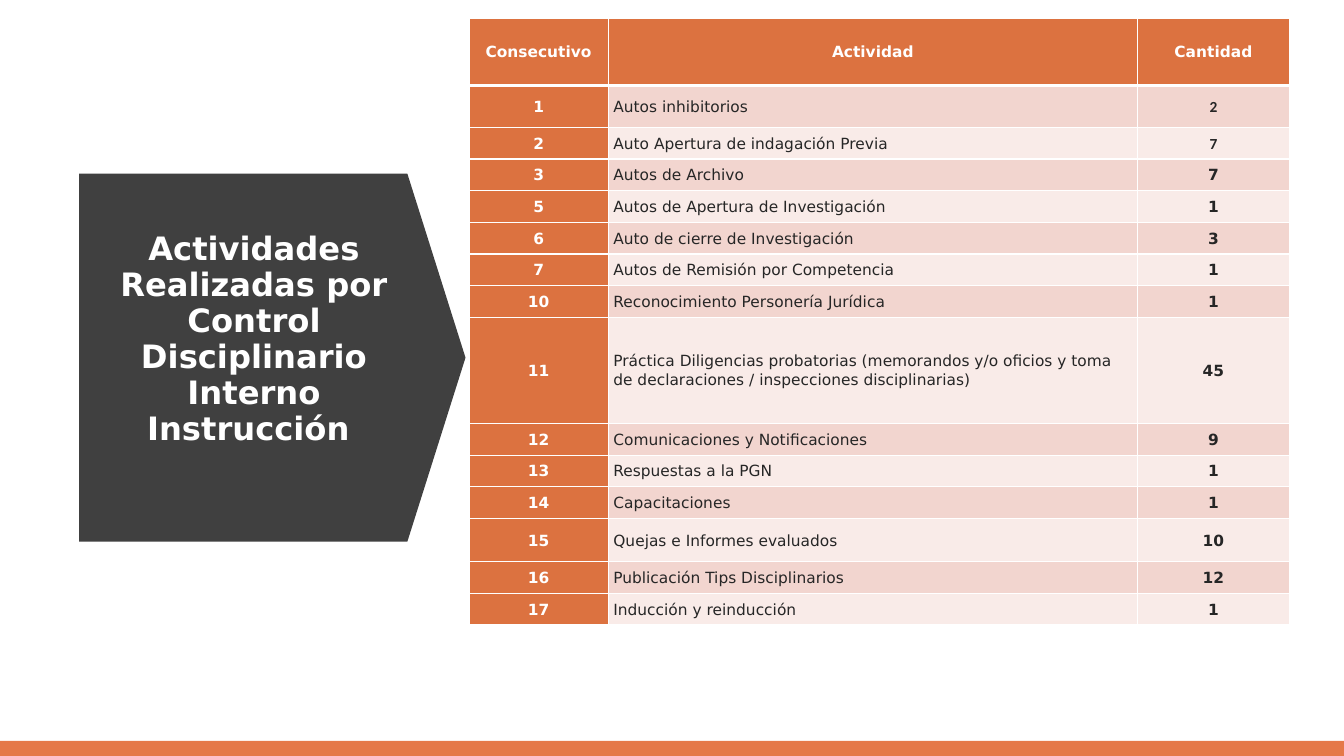
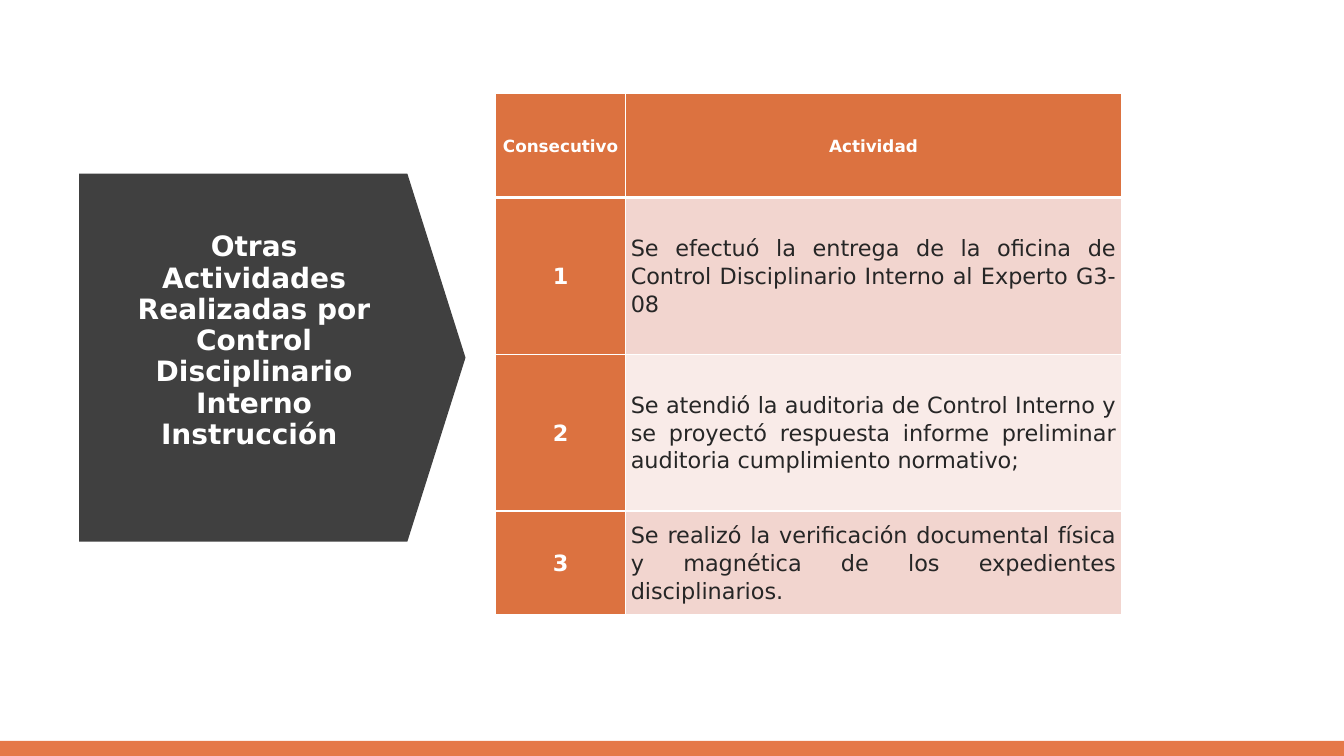
from pptx import Presentation
from pptx.dml.color import RGBColor
from pptx.enum import shapes as es, text as et
from pptx.oxml import parse_xml
from pptx.oxml.ns import nsdecls
from pptx.util import Pt

HUES = {
    "band": "E57848",
    "arrow": "404040",
    "head": "DC7240",
    "odd": "F2D5CF",
    "even": "F9EBE8",
    "ink": "262626",
    "white": "FFFFFF",
}
FACE = "DejaVu Sans"
ALIGN = et.PP_ALIGN
WIDE, HIGH = 960, 540
ARROW = (56.5, 124, 276, 263)

ACTS = {
    "title": "Actividades Realizadas por Control Disciplinario Interno Instrucción ",
    "size": 23,
    "spot": (335, 13),
    "cols": [99.5, 378, 108.5],
    "rows": [48, 30] + [22.6] * 6 + [76] + [22.6] * 3 + [31] + [22.6] * 2,
    "sizes": (11, 11),
    "align": ALIGN.LEFT,
    "faces": {(1, 2): "Calibri", (2, 2): "Calibri"},
    "data": [
        ("Consecutivo", "Actividad", "Cantidad"),
        ("1", "Autos inhibitorios", "2"),
        ("2", "Auto Apertura de indagación Previa", "7"),
        ("3", "Autos de Archivo", "7"),
        ("5", "Autos de Apertura de Investigación", "1"),
        ("6", "Auto de cierre de Investigación", "3"),
        ("7", "Autos de Remisión por Competencia", "1"),
        ("10", "Reconocimiento Personería Jurídica", "1"),
        ("11", "Práctica Diligencias probatorias (memorandos y/o oficios y toma "
               "de declaraciones / inspecciones disciplinarias)", "45"),
        ("12", "Comunicaciones y Notificaciones", "9"),
        ("13", "Respuestas a la PGN", "1"),
        ("14", "Capacitaciones", "1"),
        ("15", "Quejas e Informes evaluados", "10"),
        ("16", "Publicación Tips Disciplinarios", "12"),
        ("17", "Inducción y reinducción", "1"),
    ],
}
OTHERS = {
    "title": "Otras Actividades Realizadas por Control Disciplinario Interno Instrucción ",
    "size": 20,
    "spot": (354, 67),
    "cols": [93, 354],
    "rows": [74, 112, 112, 74],
    "sizes": (12, 16),
    "align": ALIGN.JUSTIFY,
    "faces": {},
    "data": [
        ("Consecutivo", "Actividad"),
        ("1", "Se efectuó la entrega de la oficina de Control Disciplinario "
              "Interno al Experto G3- 08"),
        ("2", "Se atendió la auditoria de Control Interno y se proyectó respuesta "
              "informe preliminar auditoria cumplimiento normativo;"),
        ("3", "Se realizó la verificación documental física y magnética de los "
              "expedientes disciplinarios."),
    ],
}


def apply(thing, **form):
    for name, value in form.items():
        setattr(thing, name, value)


def paint(thing, hue):
    thing.fill.solid()
    thing.fill.fore_color.rgb = RGBColor.from_string(HUES[hue])


def block(slide, kind, box, hue):
    shape = slide.shapes.add_shape(kind, *map(Pt, box))
    shape.shadow.inherit = False
    paint(shape, hue)
    shape.line.fill.background()
    return shape


def write(frame, words, align, gap, hue, **font):
    frame.text = words
    para = frame.paragraphs[0]
    apply(para, alignment=align, line_spacing=gap, space_before=Pt(0))
    run = para.runs[0]
    apply(run.font, **font)
    run.font.color.rgb = RGBColor.from_string(HUES[hue])


def edge(cell, widths):
    props = cell._tc.get_or_add_tcPr()
    for side, width in zip("LRTB", widths):
        props.append(parse_xml(
            f'<a:ln{side} {nsdecls("a")} w="{Pt(width)}"><a:solidFill>'
            f'<a:srgbClr val="{HUES["white"]}"/></a:solidFill></a:ln{side}>'))


def banner(slide, box, words, size):
    left, top, width, height = box
    arrow = block(slide, es.MSO_SHAPE.PENTAGON, box, "arrow")
    arrow.adjustments[0] = 0.158
    slide.shapes.element.insert(2, arrow.element)
    title = slide.shapes.title
    apply(title, left=Pt(left + 21.5), top=Pt(top + 38),
          width=Pt(width - 69), height=Pt(height - 76))
    frame = title.text_frame
    apply(frame, word_wrap=True, auto_size=et.MSO_AUTO_SIZE.NONE,
          vertical_anchor=et.MSO_ANCHOR.TOP)
    write(frame, words, ALIGN.CENTER, 0.93, "white",
          name=FACE, size=Pt(size), bold=True)


def grid(slide, plan):
    data, cols, rows = plan["data"], plan["cols"], plan["rows"]
    box = (*plan["spot"], sum(cols), sum(rows))
    table = slide.shapes.add_table(len(rows), len(cols), *map(Pt, box)).table
    for col, width in zip(table.columns, cols):
        col.width = Pt(width)
    for row, height in zip(table.rows, rows):
        row.height = Pt(height)
    for r, line in enumerate(data):
        for c, words in enumerate(line):
            cell = table.cell(r, c)
            apply(cell, margin_left=Pt(3.6), margin_right=Pt(3.6),
                  margin_top=0, margin_bottom=0,
                  vertical_anchor=et.MSO_ANCHOR.MIDDLE)
            edge(cell, (1, 1, 3 if r == 1 else 1, 3 if r == 0 else 1))
            dark = r == 0 or c == 0
            prose = r > 0 and c == 1
            paint(cell, "head" if dark else "odd" if r % 2 else "even")
            write(cell.text_frame, words,
                  plan["align"] if prose else ALIGN.CENTER, 1.07,
                  "white" if dark else "ink",
                  name=plan["faces"].get((r, c), FACE),
                  size=Pt(plan["sizes"][r > 0]), bold=not prose)


def footer(deck, slide):
    band = block(slide, es.MSO_SHAPE.RECTANGLE,
                 (0, HIGH - 10.8, WIDE, 10.8), "band")
    deck.slide_master.shapes.element.append(band.element)


def main():
    deck = Presentation()
    apply(deck, slide_width=Pt(WIDE), slide_height=Pt(HIGH))
    for plan in (ACTS, OTHERS):
        slide = deck.slides.add_slide(deck.slide_layouts[5])
        banner(slide, ARROW, plan["title"], plan["size"])
        grid(slide, plan)
    footer(deck, slide)
    deck.save("out.pptx")


if __name__ == "__main__":
    main()
